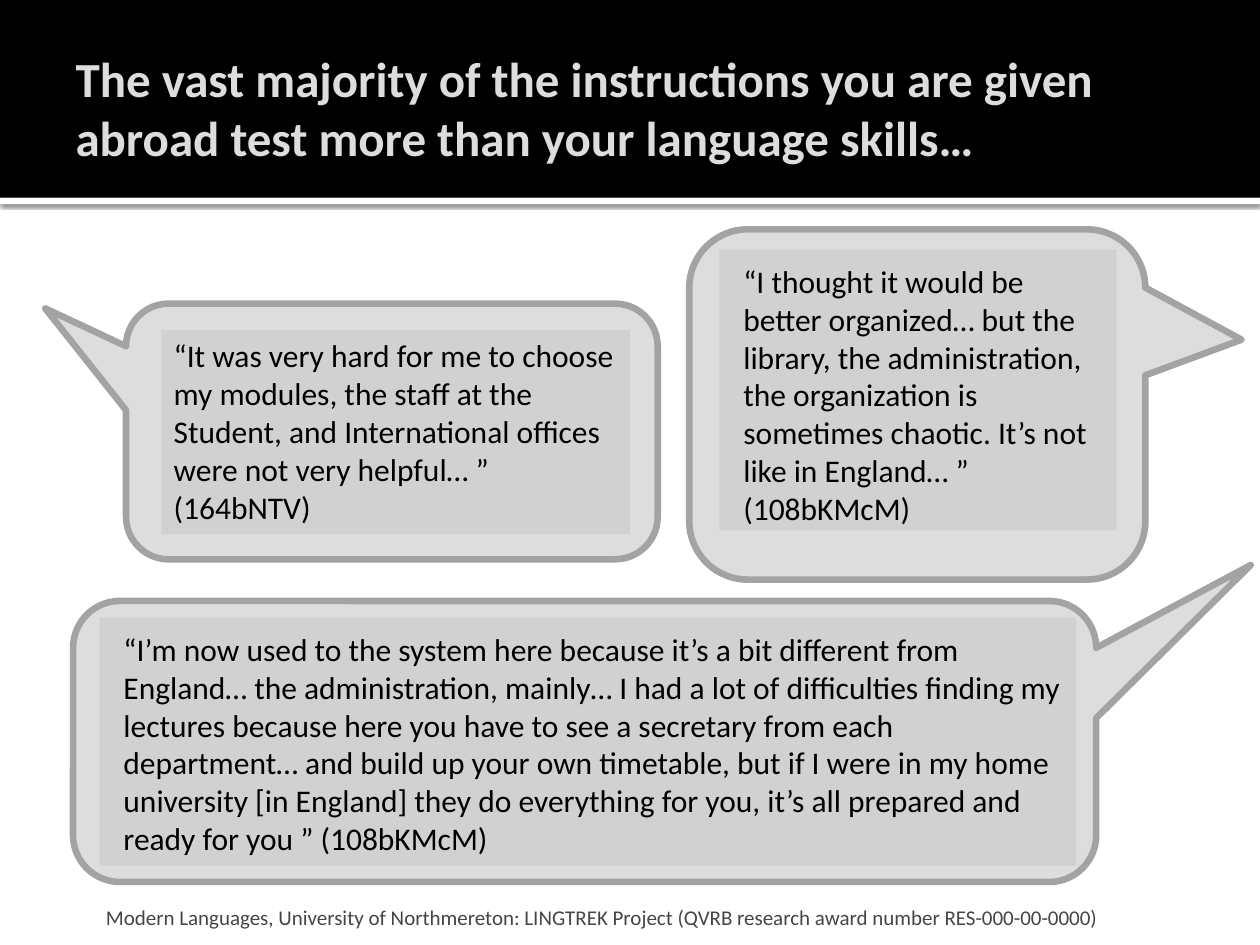
from dataclasses import dataclass

from lxml import etree
from pptx import Presentation
from pptx import util as u
from pptx.dml.color import RGBColor
from pptx.enum import shapes, text
from pptx.oxml import ns


@dataclass(frozen=True)
class Theme:
    font: str = "Calibri"
    black: str = "000000"
    white: str = "FFFFFF"
    pale: str = "DDDDDD"
    panel: str = "D1D1D1"
    edge: str = "A3A3A3"
    note: str = "454545"
    head: int = 28
    quote: int = 18
    foot: int = 12
    line: float = 3.78


T = Theme()
WIDE = (0.06, 0.1, 0.1, 0.05)
EVEN = (0.1, 0.05, 0.1, 0.05)


def color(code):
    return RGBColor.from_string(code)


def place(shape, box):
    shape.left, shape.top, shape.width, shape.height = map(u.Inches, box)


def paint(shape, fill, line=None):
    shape.fill.solid()
    shape.fill.fore_color.rgb = color(fill)
    if line:
        shape.line.color.rgb = color(line)
        shape.line.width = u.Pt(T.line)
    else:
        shape.line.fill.background()


def block(slide, kind, box, fill, line=None):
    shape = slide.shapes.add_shape(kind, *map(u.Inches, box))
    shape.shadow.inherit = False
    paint(shape, fill, line)
    return shape


def write(shape, words, size, ink, inset, anchor):
    frame = shape.text_frame
    frame.text = words
    frame.word_wrap = True
    frame.auto_size = text.MSO_AUTO_SIZE.NONE
    frame.vertical_anchor = anchor
    (frame.margin_left, frame.margin_top,
     frame.margin_right, frame.margin_bottom) = map(u.Inches, inset)
    para = frame.paragraphs[0]
    para.alignment = text.PP_ALIGN.LEFT
    para.space_before = u.Pt(0)
    para.font.name = T.font
    para.font.size = u.Pt(size)
    para.font.color.rgb = color(ink)
    return para


def shade(shape):
    props = shape._element.spPr
    glow = etree.SubElement(
        props.find(ns.qn("a:effectLst")), ns.qn("a:outerShdw"),
        blurRad=str(u.Pt(2.5)), dist=str(u.Pt(0.8)), dir="5400000",
        algn="t", rotWithShape="0")
    tint = etree.SubElement(glow, ns.qn("a:srgbClr"), val=T.black)
    etree.SubElement(tint, ns.qn("a:alpha"), val="60000")


def header(slide, box, words):
    left, top, width, height = box
    rect = shapes.MSO_SHAPE.RECTANGLE
    shade(block(slide, rect, (left, top + height, width, 0.05), T.white))
    block(slide, rect, box, T.black)
    title = slide.shapes.title
    place(title, (left + 0.5, top + 0.17, width - 1, 1.37))
    para = write(title, words, T.head, T.pale, (0.1, 0.05, 0.05, 0.05),
                 text.MSO_ANCHOR.MIDDLE)
    para.font.bold = True
    slide.shapes._spTree.append(title._element)


def bubble(slide, box, tail):
    shape = block(slide, shapes.MSO_SHAPE.ROUNDED_RECTANGULAR_CALLOUT,
                  box, T.pale, T.edge)
    for i, value in enumerate((*tail, 0.167)):
        shape.adjustments[i] = value


def quote(slide, box, words, inset=WIDE, indent=0.13, holder=None):
    if holder is None:
        panel = block(slide, shapes.MSO_SHAPE.RECTANGLE, box, T.panel)
    else:
        panel = holder
        place(panel, box)
        paint(panel, T.panel)
        slide.shapes._spTree.append(panel._element)
    para = write(panel, words, T.quote, T.black, inset, text.MSO_ANCHOR.TOP)
    props = para._p.get_or_add_pPr()
    props.set("marL", str(u.Inches(indent)))
    props.set("indent", "0")
    etree.SubElement(props, ns.qn("a:buNone"))
    props.append(props.find(ns.qn("a:defRPr")))


def footer(slide, box, words):
    label = slide.shapes.add_textbox(*map(u.Inches, box))
    write(label, words, T.foot, T.note, (0.05, 0.05, 0.05, 0),
          text.MSO_ANCHOR.BOTTOM)


def main():
    deck = Presentation()
    deck.slide_width, deck.slide_height = u.Inches(10), u.Inches(7.5)
    slide = deck.slides.add_slide(deck.slide_layouts[1])
    body = slide.placeholders[1]

    header(slide, (0, 0, 10, 1.57),
           "The vast majority of the instructions you are given abroad "
           "test more than your language skills…")
    bubble(slide, (0.58, 4.77, 8.12, 2.23), (0.651, -0.628))
    bubble(slide, (5.47, 1.82, 3.62, 2.78), (0.711, -0.185))
    bubble(slide, (1, 2.41, 4.22, 2.03), (-0.652, -0.481))
    quote(slide, (5.71, 1.98, 3.15, 2.23),
          "“I thought it would be better organized… but the library, the "
          "administration, the organization is sometimes chaotic. It’s not "
          "like in England… ” (108bKMcM)", holder=body)
    footer(slide, (0.79, 7.06, 8.41, 0.32),
           "Modern Languages, University of Northmereton: LINGTREK Project "
           "(QVRB research award number RES-000-00-0000)")
    quote(slide, (1.28, 2.62, 3.72, 1.62),
          "“It was very hard for me to choose my modules, the staff at the "
          "Student, and International offices were not very helpful… ” "
          "(164bNTV)", EVEN, 0)
    quote(slide, (0.79, 4.9, 7.75, 1.97),
          "“I’m now used to the system here because it’s a bit different "
          "from England… the administration, mainly… I had a lot of "
          "difficulties finding my lectures because here you have to see a "
          "secretary from each department… and build up your own timetable, "
          "but if I were in my home university [in England] they do "
          "everything for you, it’s all prepared and ready for you ” "
          "(108bKMcM)")
    deck.save("out.pptx")


if __name__ == "__main__":
    main()
